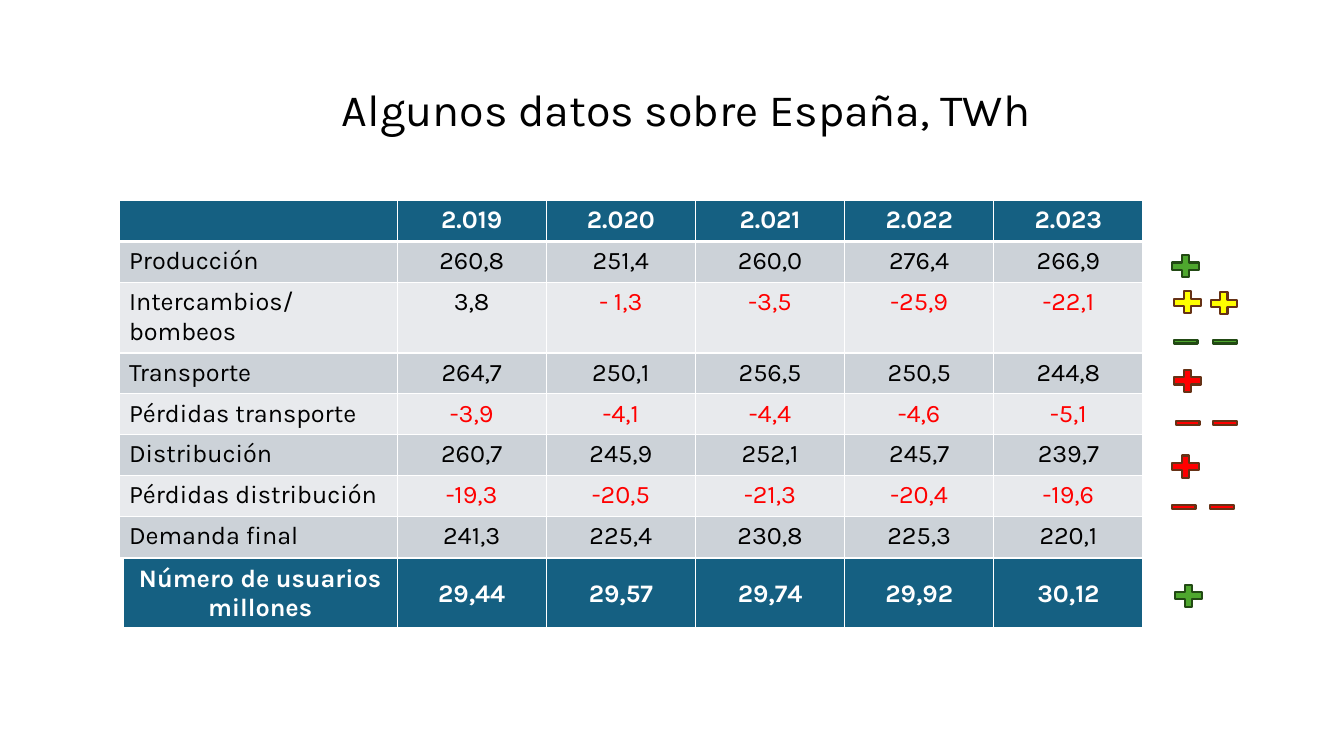
from dataclasses import dataclass

from lxml.etree import SubElement
from pptx import Presentation
from pptx.dml.color import RGBColor as Color
from pptx.enum.shapes import MSO_SHAPE as Shape
from pptx.enum.text import MSO_ANCHOR as Anchor, PP_ALIGN as Align
from pptx.oxml.ns import qn
from pptx.util import Inches, Pt


@dataclass(frozen=True)
class Theme:
    font: str = "Karla"
    title_size: int = 32
    table_size: int = 18
    thin: int = 1
    thick: int = 3
    sign_line: float = 1.5
    white: str = "FFFFFF"
    black: str = "000000"
    red: str = "FF0000"
    yellow: str = "FFFF00"
    green: str = "4EA72E"
    dark_green: str = "224914"
    brown: str = "663216"
    blue: str = "156082"
    bands: tuple = ("CCD2D8", "E8EAED")


class Page:
    """Draws on one slide; all lengths are percentages of its size."""

    def __init__(self, deck, theme):
        self.deck = deck
        self.theme = theme
        self.slide = deck.slides.add_slide(deck.slide_layouts[6])

    def x(self, share):
        return round(self.deck.slide_width * share / 100)

    def y(self, share):
        return round(self.deck.slide_height * share / 100)

    def area(self, left, top, width, height):
        return self.x(left), self.y(top), self.x(width), self.y(height)

    def set_text(self, frame, text, size, color, bold=False, align=Align.CENTER):
        frame.text = text
        for para in frame.paragraphs:
            para.alignment = align
            para.font.name = self.theme.font
            para.font.size = Pt(size)
            para.font.bold = bold
            para.font.color.rgb = Color.from_string(color)

    def title(self, text, *area):
        box = self.slide.shapes.add_textbox(*self.area(*area))
        frame = box.text_frame
        frame.word_wrap = True
        frame.vertical_anchor = Anchor.MIDDLE
        self.set_text(frame, text, self.theme.title_size, self.theme.black)
        frame.paragraphs[0].line_spacing = 0.9

    def table(self, left, top, columns, row_height, rows):
        """Add an unstyled table and return its cells row by row."""
        area = self.area(left, top, sum(columns), row_height * len(rows))
        table = self.slide.shapes.add_table(len(rows), len(columns), *area).table
        table.first_row = table.horz_banding = False
        for column, width in zip(table.columns, columns):
            column.width = self.x(width)
        for row in table.rows:
            row.height = self.y(row_height)
        return [list(row.cells) for row in table.rows]

    def cell(self, cell, text, fill, color, bold=False, align=Align.CENTER,
             top=Theme.thin, bottom=Theme.thin):
        properties = cell._tc.get_or_add_tcPr()
        widths = {"lnL": self.theme.thin, "lnR": self.theme.thin, "lnT": top, "lnB": bottom}
        for side, width in widths.items():
            line = SubElement(properties, qn(f"a:{side}"), w=str(Pt(width)))
            solid = SubElement(line, qn("a:solidFill"))
            SubElement(solid, qn("a:srgbClr"), val=self.theme.white)
        cell.fill.solid()
        cell.fill.fore_color.rgb = Color.from_string(fill)
        self.set_text(cell.text_frame, text, self.theme.table_size, color, bold, align)

    def header_cell(self, cell, text):
        self.cell(cell, text, self.theme.blue, self.theme.white, bold=True,
                  bottom=self.theme.thick)

    def sign(self, kind, left, top, fill, line):
        width, height = SIGN_SIZES[kind]
        shape = self.slide.shapes.add_shape(kind, *self.area(left, top, width, height))
        shape.shadow.inherit = False
        shape.fill.solid()
        shape.fill.fore_color.rgb = Color.from_string(fill)
        shape.line.color.rgb = Color.from_string(line)
        shape.line.width = Pt(self.theme.sign_line)


PLUS, MINUS = Shape.MATH_PLUS, Shape.MATH_MINUS
SIGN_SIZES = {PLUS: (2.7, 4), MINUS: (2.4, 2.13)}
YEAR_COLUMNS = [11.1] * 5
ROW_HEIGHT = 5.41

ENERGY = [
    ["", "2.019", "2.020", "2.021", "2.022", "2.023"],
    ["Producción", "260,8", "251,4", "260,0", "276,4", "266,9"],
    ["Intercambios/bombeos", "3,8", "- 1,3", "-3,5", "-25,9", "-22,1"],
    ["Transporte", "264,7", "250,1", "256,5", "250,5", "244,8"],
    ["Pérdidas transporte", "-3,9", "-4,1", "-4,4", "-4,6", "-5,1"],
    ["Distribución", "260,7", "245,9", "252,1", "245,7", "239,7"],
    ["Pérdidas distribución", "-19,3", "-20,5", "-21,3", "-20,4", "-19,6"],
    ["Demanda final", "241,3", "225,4", "230,8", "225,3", "220,1"],
]
USERS = ["Número de usuarios\nmillones", "29,44", "29,57", "29,74", "29,92", "30,12"]


def energy_table(page):
    theme = page.theme
    header, *body = page.table(8.85, 26.53, [20.7] + YEAR_COLUMNS, ROW_HEIGHT, ENERGY)
    for cell, year in zip(header, ENERGY[0]):
        page.header_cell(cell, year)
    for index, (cells, values) in enumerate(zip(body, ENERGY[1:])):
        for column, (cell, value) in enumerate(zip(cells, values)):
            page.cell(
                cell, value, theme.bands[index % 2],
                theme.red if value.startswith("-") else theme.black,
                align=Align.CENTER if column else Align.LEFT,
                top=theme.thin if index else theme.thick,
            )


def users_table(page):
    cells = page.table(9.15, 73.87, [20.4] + YEAR_COLUMNS, ROW_HEIGHT, [USERS])[0]
    for cell, value in zip(cells, USERS):
        page.header_cell(cell, value)
        cell.vertical_anchor = Anchor.MIDDLE


def trend_signs(page):
    theme = page.theme
    green = theme.green, theme.dark_green
    yellow = theme.yellow, theme.brown
    red = theme.red, theme.brown
    for kind, left, top, colors in [
        (PLUS, 86.87, 33.2, green),
        (PLUS, 87.02, 38, yellow),
        (PLUS, 89.72, 38.13, yellow),
        (MINUS, 87.02, 44.13, green),
        (MINUS, 89.95, 44.13, green),
        (PLUS, 87.02, 48.4, red),
        (MINUS, 87.17, 54.93, red),
        (MINUS, 89.95, 54.93, red),
        (PLUS, 86.87, 59.73, red),
        (MINUS, 86.87, 66, red),
        (MINUS, 89.72, 66, red),
        (PLUS, 87.1, 76.8, green),
    ]:
        page.sign(kind, left, top, *colors)


def main():
    deck = Presentation()
    deck.slide_width, deck.slide_height = Inches(13.33), Inches(7.5)
    page = Page(deck, Theme())
    page.title("Algunos datos sobre España, TWh", 7.95, 5.2, 86.27, 19.33)
    energy_table(page)
    users_table(page)
    trend_signs(page)
    deck.save("out.pptx")


if __name__ == "__main__":
    main()
